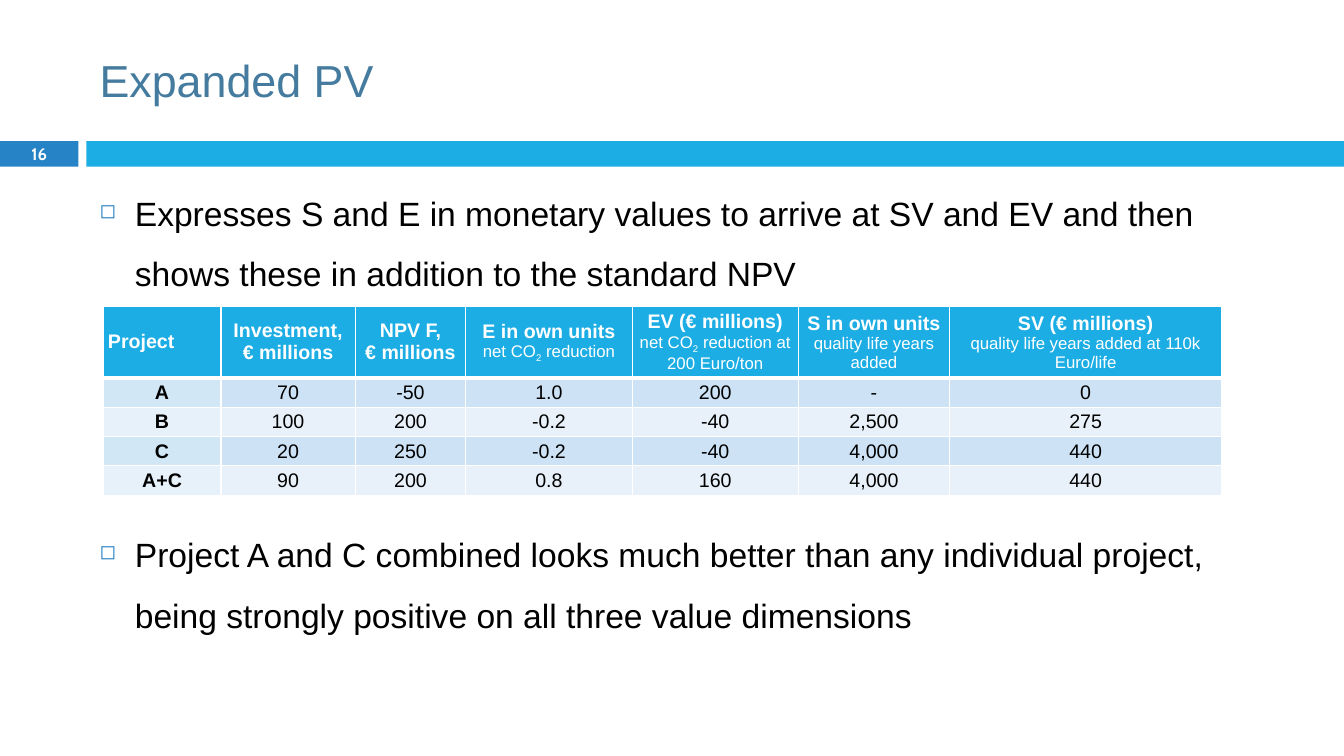
from lxml import etree
from pptx import Presentation
from pptx import util as u
from pptx.dml.color import RGBColor
from pptx.enum import shapes, text
from pptx.oxml.ns import qn

WHITE = RGBColor(0xFF, 0xFF, 0xFF)
BLACK = RGBColor(0, 0, 0)
TITLE_BLUE = RGBColor(0x45, 0x7B, 0x9E)
DARK_BLUE = RGBColor(0x26, 0x83, 0xC6)
SKY_BLUE = RGBColor(0x1C, 0xAD, 0xE4)
BAND_FILLS = (
    (RGBColor(0xD1, 0xE7, 0xF6), RGBColor(0xCD, 0xE3, 0xF5)),
    (RGBColor(0xE7, 0xF1, 0xFA), RGBColor(0xE8, 0xF1, 0xFA)),
)

SLIDE_WIDTH, SLIDE_HEIGHT = 33.87, 19.05
COLUMN_WIDTHS = (2.97, 3.38, 2.79, 4.19, 4.19, 3.81, 6.86)
HEADER_HEIGHT, ROW_HEIGHT = 1.8, 0.74
CO2 = (("net CO", 0), ("2", -25))
HEADERS = (
    ("Project", ()),
    ("Investment, € millions", ()),
    ("NPV F,\n€ millions", ()),
    ("E in own units\n", (*CO2, (" reduction", 0))),
    ("EV (€ millions)\n", (*CO2, (" reduction at 200 Euro/ton", 0))),
    ("S in own units\n", (("quality life years added", 0),)),
    ("SV (€ millions)\n", (("quality life years added at 110k Euro/life", 0),)),
)
PROJECTS = (
    ("A", "70", "-50", "1.0", "200", "-", "0"),
    ("B", "100", "200", "-0.2", "-40", "2,500", "275"),
    ("C", "20", "250", "-0.2", "-40", "4,000", "440"),
    ("A+C", "90", "200", "0.8", "160", "4,000", "440"),
)
STATEMENTS = (
    ("Expresses S and E in monetary values to arrive at SV and EV and then "
     "shows these in addition to the standard NPV", 7),
    ("Project A and C combined looks much better than any individual project, "
     "being strongly positive on all three value dimensions", 157.5),
)


def add_run(paragraph, words, size, color, bold=False, font="Arial", baseline=0):
    """Add words to a paragraph, turning each newline into a line break."""
    for index, line in enumerate(words.split("\n")):
        if index:
            paragraph.add_line_break()
            line_break = paragraph._p.findall(qn("a:br"))[-1]
            etree.SubElement(line_break, qn("a:rPr"), sz=str(size * 100))
        if line:
            run = paragraph.add_run()
            run.text = line
            run.font.name = font
            run.font.size = u.Pt(size)
            run.font.bold = bold
            run.font.color.rgb = color
            if baseline:
                run._r.get_or_add_rPr().set("baseline", str(baseline * 1000))


def add_text_frame(slide, box, anchor):
    """Add a wrapping text box and return its text frame."""
    frame = slide.shapes.add_textbox(*map(u.Cm, box)).text_frame
    frame.word_wrap = True
    frame.vertical_anchor = anchor
    return frame


def add_bar(slide, box, color):
    """Add a plain filled rectangle."""
    bar = slide.shapes.add_shape(shapes.MSO_SHAPE.RECTANGLE, *map(u.Cm, box))
    bar.shadow.inherit = False
    bar.fill.solid()
    bar.fill.fore_color.rgb = color
    bar.line.fill.background()
    return bar


def add_divider(slide, box, number):
    """Add the slide number tab and the long bar beside it."""
    left, top, width, height = box
    tab_width, gap = 1.98, 0.2
    tab = add_bar(slide, (left, top, tab_width, height), DARK_BLUE)
    bar_left = left + tab_width + gap
    add_bar(slide, (bar_left, top, width - tab_width - gap, height), SKY_BLUE)
    frame = tab.text_frame
    frame.margin_top = frame.margin_bottom = 0
    frame.vertical_anchor = text.MSO_ANCHOR.MIDDLE
    paragraph = frame.paragraphs[0]
    paragraph.alignment = text.PP_ALIGN.CENTER
    add_run(paragraph, number, 12, WHITE, True, "Cabin")


def add_title(slide, box, words):
    """Add the slide title."""
    frame = add_text_frame(slide, box, text.MSO_ANCHOR.MIDDLE)
    add_run(frame.paragraphs[0], words, 32, TITLE_BLUE)


def add_statements(slide, box):
    """Add the bulleted statements, leaving room for the table between them."""
    frame = add_text_frame(slide, box, text.MSO_ANCHOR.TOP)
    indent = u.Cm(0.89)
    for index, (words, space_before) in enumerate(STATEMENTS):
        paragraph = frame.add_paragraph() if index else frame.paragraphs[0]
        paragraph.line_spacing = 1.5
        paragraph.space_before = u.Pt(space_before)
        properties = paragraph._p.get_or_add_pPr()
        properties.set("marL", str(indent))
        properties.set("indent", str(-indent))
        bullet_color = etree.SubElement(properties, qn("a:buClr"))
        etree.SubElement(bullet_color, qn("a:srgbClr"), val=str(DARK_BLUE))
        etree.SubElement(properties, qn("a:buSzPct"), val="60000")
        etree.SubElement(properties, qn("a:buChar"), char="◻")
        add_run(paragraph, words, 24, BLACK)


def format_cell(cell, fill, top=1, bottom=1):
    """Set fill, margins and white borders, and return the cell's paragraph."""
    cell.fill.solid()
    cell.fill.fore_color.rgb = fill
    cell.margin_left = cell.margin_right = u.Cm(0.12)
    cell.margin_top = cell.margin_bottom = 0
    cell.vertical_anchor = text.MSO_ANCHOR.MIDDLE
    properties = cell._tc.get_or_add_tcPr()
    borders = (("a:lnL", 1), ("a:lnR", 1), ("a:lnT", top), ("a:lnB", bottom))
    for index, (tag, points) in enumerate(borders):
        border = etree.Element(qn(tag), w=str(u.Pt(points)))
        border_fill = etree.SubElement(border, qn("a:solidFill"))
        etree.SubElement(border_fill, qn("a:srgbClr"), val=str(WHITE))
        properties.insert(index, border)
    paragraph = cell.text_frame.paragraphs[0]
    paragraph.alignment = text.PP_ALIGN.CENTER
    paragraph.space_before = paragraph.space_after = u.Pt(2)
    return paragraph


def add_project_table(slide, left, top):
    """Add the table of project values."""
    height = HEADER_HEIGHT + ROW_HEIGHT * len(PROJECTS)
    box = map(u.Cm, (left, top, sum(COLUMN_WIDTHS), height))
    table = slide.shapes.add_table(len(PROJECTS) + 1, len(HEADERS), *box).table
    for column, width in zip(table.columns, COLUMN_WIDTHS):
        column.width = u.Cm(width)
    for index, row in enumerate(table.rows):
        row.height = u.Cm(ROW_HEIGHT if index else HEADER_HEIGHT)

    for column, (heading, details) in enumerate(HEADERS):
        paragraph = format_cell(table.cell(0, column), SKY_BLUE, bottom=3)
        if column == 0:
            paragraph.alignment = text.PP_ALIGN.LEFT
        add_run(paragraph, heading, 14, WHITE, True)
        for words, baseline in details:
            add_run(paragraph, words, 12, WHITE, baseline=baseline)

    for row, values in enumerate(PROJECTS, 1):
        name_fill, value_fill = BAND_FILLS[(row - 1) % 2]
        for column, value in enumerate(values):
            is_name = column == 0
            paragraph = format_cell(table.cell(row, column),
                                    name_fill if is_name else value_fill,
                                    top=3 if row == 1 else 1)
            add_run(paragraph, value, 14, BLACK, is_name)


def main():
    """Build the slide and save it."""
    presentation = Presentation()
    presentation.slide_width = u.Cm(SLIDE_WIDTH)
    presentation.slide_height = u.Cm(SLIDE_HEIGHT)
    slide = presentation.slides.add_slide(presentation.slide_layouts[6])
    add_divider(slide, (0, 3.56, SLIDE_WIDTH, 0.64), "16")
    add_title(slide, (2.26, 0.64, 30.2, 2.74), "Expanded PV")
    add_statements(slide, (2.26, 4.22, 28.85, 13.69))
    add_project_table(slide, 2.6, 7.72)
    presentation.save("out.pptx")


if __name__ == "__main__":
    main()
